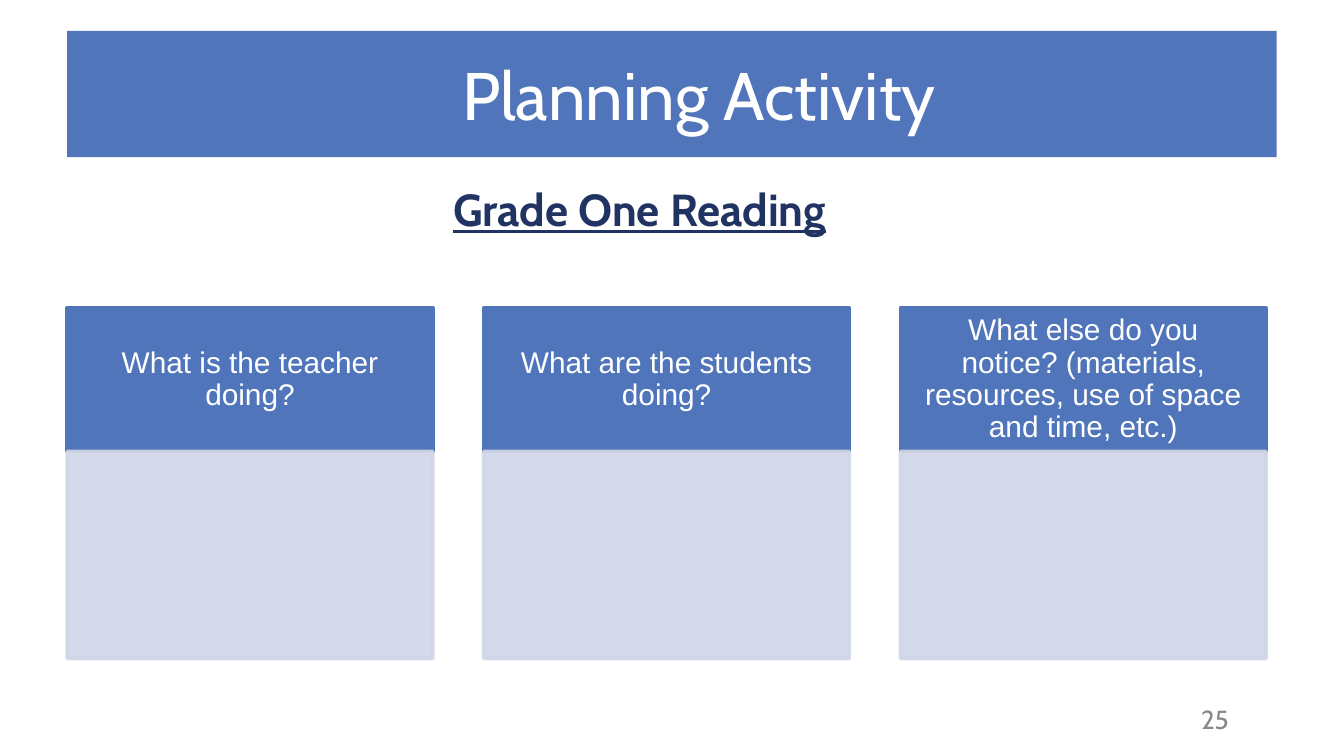
from pptx import Presentation
from pptx import util as u
from pptx.dml.color import RGBColor
from pptx.enum import shapes, text
from pptx.oxml.ns import qn
from lxml import etree

BLUE, PALE, NAVY, GREY, WHITE = "5075BB", "D0D6E7", "213363", "888888", "FFFFFF"
QUESTIONS = [
    "What is the teacher doing?",
    "What are the students doing?",
    "What else do you notice? (materials, resources, use of space and time, etc.)",
]
COLUMN_LEFT, COLUMN_WIDTH, COLUMN_STEP = 0.5, 2.72, 3.1
HEADER_TOP, HEADER_HEIGHT, ANSWER_HEIGHT = 2.29, 1.07, 1.54


def color(value):
    return RGBColor.from_string(value)


def write(shape, words, font_color, margins, line_spacing=1.0, **font_format):
    """Fill a shape with one centred paragraph; margins are left, top, right, bottom."""
    frame = shape.text_frame
    frame.auto_size = text.MSO_AUTO_SIZE.NONE
    frame.word_wrap = True
    frame.vertical_anchor = text.MSO_ANCHOR.MIDDLE
    for side, margin in zip(("left", "top", "right", "bottom"), margins):
        setattr(frame, f"margin_{side}", u.Inches(margin))
    paragraph = frame.paragraphs[0]
    paragraph.alignment = text.PP_ALIGN.CENTER
    paragraph.line_spacing = line_spacing
    run = paragraph.add_run()
    run.text = words
    run.font.color.rgb = color(font_color)
    for name, value in font_format.items():
        setattr(run.font, name, value)


def add_title(slide, words):
    title = slide.shapes.title
    title.left, title.top, title.width, title.height = map(u.Inches, (0.5, 0.23, 9, 0.94))
    title.fill.solid()
    title.fill.fore_color.rgb = color(BLUE)
    write(title, words, WHITE, (0.5, 0.05, 0.1, 0.05), name="Cabin", size=u.Pt(36))


def add_label(slide, box, words, font_color, margins, **text_format):
    label = slide.shapes.add_textbox(*map(u.Inches, box))
    write(label, words, font_color, margins, name="Cabin", **text_format)


def add_panel(slide, box, panel_color, opacity=100):
    panel = slide.shapes.add_shape(shapes.MSO_SHAPE.RECTANGLE, *map(u.Inches, box))
    panel.shadow.inherit = False
    panel.fill.solid()
    panel.fill.fore_color.rgb = color(panel_color)
    panel.line.color.rgb = color(panel_color)
    panel.line.width = u.Pt(2)
    if opacity < 100:
        for element in panel._element.spPr.iter(qn("a:srgbClr")):
            etree.SubElement(element, qn("a:alpha"), val=str(opacity * 1000))
    return panel


def add_question_column(slide, index, question):
    left = COLUMN_LEFT + index * COLUMN_STEP
    header = add_panel(slide, (left, HEADER_TOP, COLUMN_WIDTH, HEADER_HEIGHT), BLUE)
    write(header, question, WHITE, (0.12, 0.07, 0.12, 0.07), 0.9, name="Arial", size=u.Pt(16))
    add_panel(slide, (left, HEADER_TOP + HEADER_HEIGHT, COLUMN_WIDTH, ANSWER_HEIGHT), PALE, 90)


def main():
    # Widescreen page, 16:9
    presentation = Presentation()
    presentation.slide_width = u.Inches(10)
    presentation.slide_height = u.Inches(10 * 9 / 16)
    slide = presentation.slides.add_slide(presentation.slide_layouts[5])

    # Title bar and subject
    add_title(slide, "Planning Activity")
    add_label(slide, (0.33, 1.12, 8.86, 0.81), "Grade One Reading", NAVY, (0.1,) * 4,
              line_spacing=1.15, size=u.Pt(24), bold=True, underline=True)

    # Question columns with room for answers
    for index, question in enumerate(QUESTIONS):
        add_question_column(slide, index, question)

    # Page number
    add_label(slide, (8.5, 5.2, 1.08, 0.3), "25", GREY, (0.1, 0.05, 0.1, 0.05), size=u.Pt(14))

    presentation.save("out.pptx")


if __name__ == "__main__":
    main()
